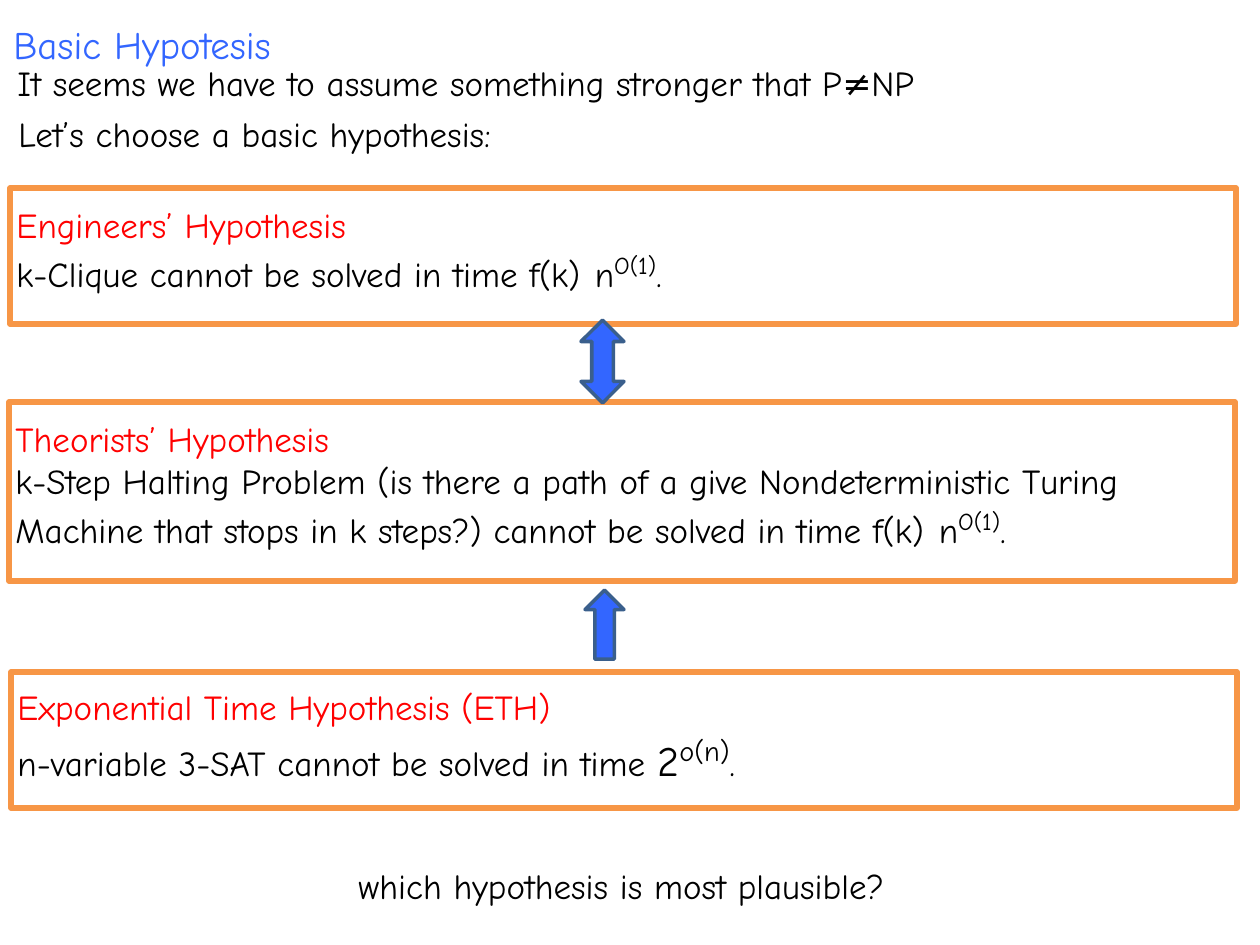
from pptx import Presentation
from pptx.dml.color import RGBColor
from pptx.enum.shapes import MSO_SHAPE as Shape
from pptx.enum.text import MSO_AUTO_SIZE as AutoSize, PP_ALIGN as Align
from pptx.util import Emu, Pt

PX = 914400 / 126
FONT = "Comic Neue"
BLACK = RGBColor(0x00, 0x00, 0x00)
RED = RGBColor(0xFF, 0x00, 0x00)
BLUE = RGBColor(0x33, 0x66, 0xFF)
ORANGE = RGBColor(0xF7, 0x96, 0x46)
STEEL = RGBColor(0x3A, 0x5F, 0x8C)

BODY_SIZE = 20
SUPERSCRIPT = "30000"
FRAME_WIDTH = 1226
TEXT_WIDTH = 1251

# Spans of a line: (text, size, raised)
POLYNOMIAL_BOUND = [(" ", 24, False), ("n", 20, False), ("O(1)", 24, True), (".", 20, False)]
EXPONENTIAL_BOUND = [("2", 24, False), ("o(n)", 28, True), (".", 20, False)]


def px(*lengths):
    return [Emu(round(length * PX)) for length in lengths]


def add_text(page, place, lines, align=Align.LEFT):
    """Each line is a pair of colour and spans."""
    frame = page.shapes.add_textbox(*px(*place)).text_frame
    frame.word_wrap = True
    frame.auto_size = AutoSize.SHAPE_TO_FIT_TEXT
    for number, (color, spans) in enumerate(lines):
        para = frame.add_paragraph() if number else frame.paragraphs[0]
        para.alignment = align
        para.font.name = FONT
        para.font.color.rgb = color
        for text, size, raised in spans:
            span = para.add_run()
            span.text = text
            span.font.size = Pt(size)
            if raised:
                span.font._element.set("baseline", SUPERSCRIPT) if hasattr(
                    span.font, "_element") else span._r.get_or_add_rPr().set("baseline", SUPERSCRIPT)


def add_line(page, place, text, size=BODY_SIZE, color=BLACK, align=Align.LEFT):
    add_text(page, place, [(color, [(text, size, False)])], align)


def add_outlined(page, kind, place, line_color, line_width):
    shape = page.shapes.add_shape(kind, *px(*place))
    shape.shadow.inherit = False
    shape.fill.background()
    shape.line.color.rgb = line_color
    shape.line.width = Pt(line_width)
    return shape


def add_hypothesis(page, left, top, height, text_top, name, claim, bound):
    add_text(page, (left - 6, text_top, TEXT_WIDTH, height - 30), [
        (RED, [(name, BODY_SIZE, False)]),
        (BLACK, [(claim, BODY_SIZE, False)] + bound),
    ])
    add_outlined(page, Shape.RECTANGLE, (left, top, FRAME_WIDTH, height), ORANGE, 3)


def add_arrow(page, kind, place, rotation):
    arrow = add_outlined(page, kind, place, STEEL, 2)
    arrow.fill.solid()
    arrow.fill.fore_color.rgb = BLUE
    arrow.rotation = rotation


def main():
    deck = Presentation()
    deck.slide_width, deck.slide_height = px(1260, 945)
    page = deck.slides.add_slide(deck.slide_layouts[6])

    # Heading and introduction
    add_line(page, (5, 55, TEXT_WIDTH, 55),
             "It seems we have to assume something stronger that P≠NP")
    add_line(page, (6, 106, 697, 55), "Let’s choose a basic hypothesis:")
    add_line(page, (1, 14, 809, 57), "Basic Hypotesis", 22.2, BLUE)

    # Framed hypotheses
    add_hypothesis(page, 10, 188, 136, 197, "Engineers’ Hypothesis",
                   "k-Clique cannot be solved in time f(k)", POLYNOMIAL_BOUND)
    add_hypothesis(page, 9, 402, 179, 411, "Theorists’ Hypothesis",
                   "k-Step Halting Problem (is there a path of a give Nondeterministic "
                   "Turing Machine that stops in k steps?) cannot be solved in time f(k)",
                   POLYNOMIAL_BOUND)
    add_hypothesis(page, 11, 672, 136, 679, "Exponential Time Hypothesis (ETH)",
                   "n-variable 3-SAT cannot be solved in time ", EXPONENTIAL_BOUND)

    # Implications between them
    add_arrow(page, Shape.LEFT_RIGHT_ARROW, (561, 340, 83, 43), 90)
    add_arrow(page, Shape.DOWN_ARROW, (585, 590, 39, 69), 180)

    # Closing question
    add_line(page, (171, 858, 901, 55), "which hypothesis is most plausible?",
             align=Align.CENTER)

    deck.save("out.pptx")


if __name__ == "__main__":
    main()
